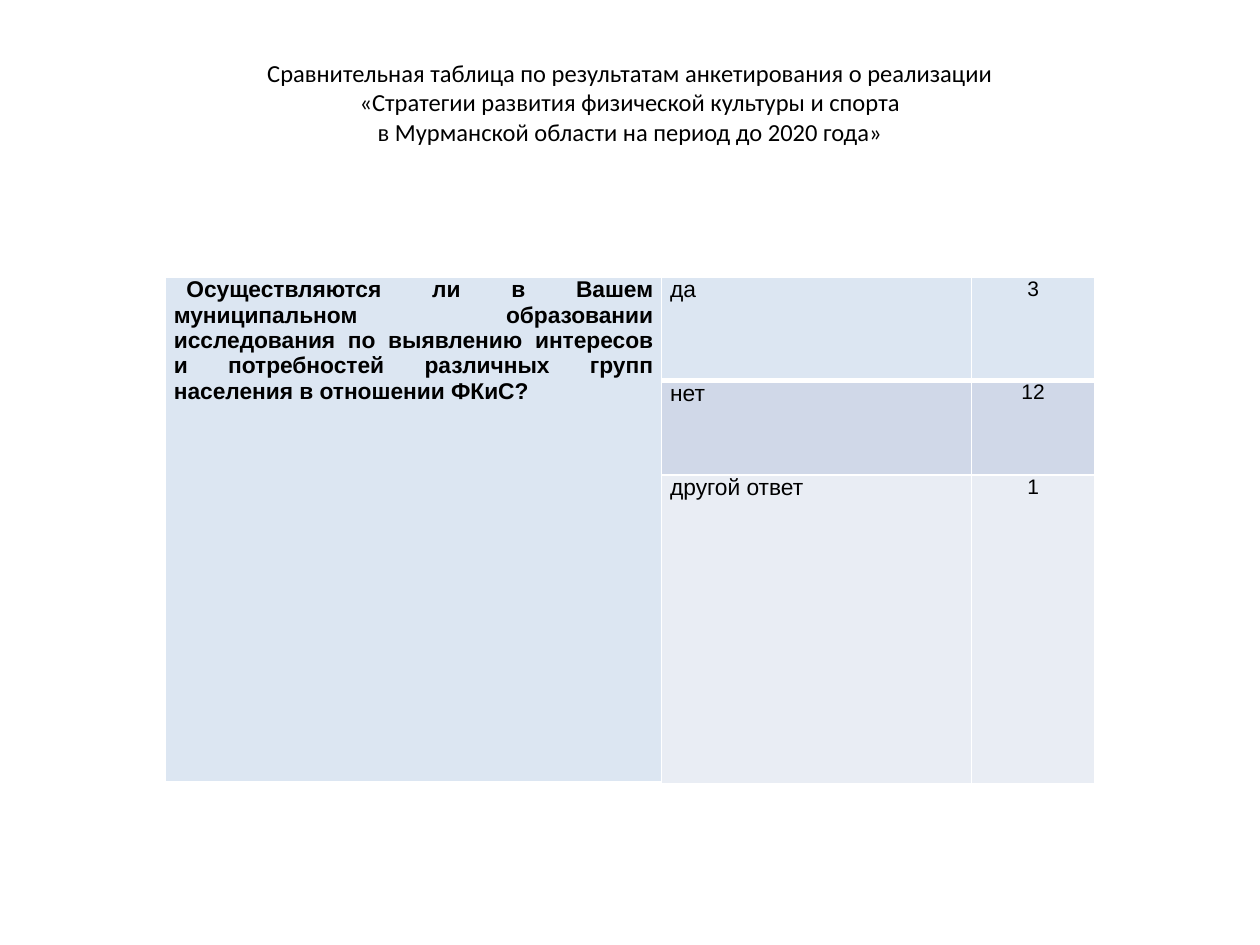
from lxml.etree import SubElement
from pptx import Presentation
from pptx.dml.color import RGBColor
from pptx.enum.text import MSO_ANCHOR, PP_ALIGN
from pptx.oxml.ns import qn
from pptx.util import Inches, Pt

THEME = {
    "text": RGBColor.from_string("000000"),
    "border": "FFFFFF",
    "rows": ["DCE6F2", "D0D8E8", "E9EDF4"],
    "title": {"name": "Calibri", "size": Pt(14)},
    "question": {"name": "Arial", "size": Pt(13), "bold": True},
    "answer": {"name": "Arial", "size": Pt(13), "bold": False},
    "count": {"name": "Arial", "size": Pt(12), "bold": False},
}
TITLE = ("Сравнительная таблица по результатам анкетирования о реализации\v"
         "«Стратегии развития физической культуры и спорта\v"
         "в Мурманской области на период до 2020 года»")
QUESTION = ("Осуществляются ли в Вашем муниципальном образовании исследования "
            "по выявлению интересов и потребностей различных групп населения "
            "в отношении ФКиС?")
ANSWERS = [("да", "3"), ("нет", "12"), ("другой ответ", "1")]
COLS = [3.94, 2.46, 0.98]
ROWS = [0.82, 0.75, 2.45]


def write(tf, text, style, align):
    p = tf.paragraphs[0]
    p.text = text
    p.alignment = align
    for r in p.runs:
        for name, value in THEME[style].items():
            setattr(r.font, name, value)
        r.font.color.rgb = THEME["text"]
    return p


def add_border(cell, side, width):
    ln = SubElement(cell._tc.get_or_add_tcPr(), qn(f"a:ln{side}"), w=str(Pt(width)))
    fill = SubElement(ln, qn("a:solidFill"))
    SubElement(fill, qn("a:srgbClr"), val=THEME["border"])


prs = Presentation()
prs.slide_width, prs.slide_height = Inches(10), Inches(7.5)
s = prs.slides.add_slide(prs.slide_layouts[5])

# Title, raised by a deeper bottom inset
title = s.shapes.title
for name, value in {"left": 0.5, "top": 0.3, "width": 9, "height": 1.25}.items():
    setattr(title, name, Inches(value))
tf = title.text_frame
tf.vertical_anchor = MSO_ANCHOR.MIDDLE
tf.margin_bottom = Inches(0.28)
write(tf, TITLE, "title", PP_ALIGN.CENTER)

# Table grid
table = s.shapes.add_table(len(ROWS), len(COLS), Inches(1.31), Inches(2.2),
                           Inches(sum(COLS)), Inches(sum(ROWS))).table
table.first_row = table.horz_banding = False
for col, width in zip(table.columns, COLS):
    col.width = Inches(width)
for row, height in zip(table.rows, ROWS):
    row.height = Inches(height)

# Cell insets, borders and fills; the first row is ruled off more heavily
for i, row in enumerate(table.rows):
    for cell in row.cells:
        cell.margin_left = cell.margin_right = Inches(0.07)
        cell.margin_top = cell.margin_bottom = 0
        for side in "LRTB":
            heavy = (i, side) in [(0, "B"), (1, "T")]
            add_border(cell, side, 3 if heavy else 1)
        cell.fill.solid()
        cell.fill.fore_color.rgb = RGBColor.from_string(THEME["rows"][i])

# Question spans all answers
question = table.cell(0, 0)
question.merge(table.cell(len(ROWS) - 1, 0))
p = write(question.text_frame, QUESTION, "question", PP_ALIGN.JUSTIFY)
p._p.get_or_add_pPr().set("indent", str(Inches(0.1)))

# Answers and counts
for i, (answer, count) in enumerate(ANSWERS):
    write(table.cell(i, 1).text_frame, answer, "answer", PP_ALIGN.LEFT)
    write(table.cell(i, 2).text_frame, count, "count", PP_ALIGN.CENTER)

prs.save("out.pptx")
